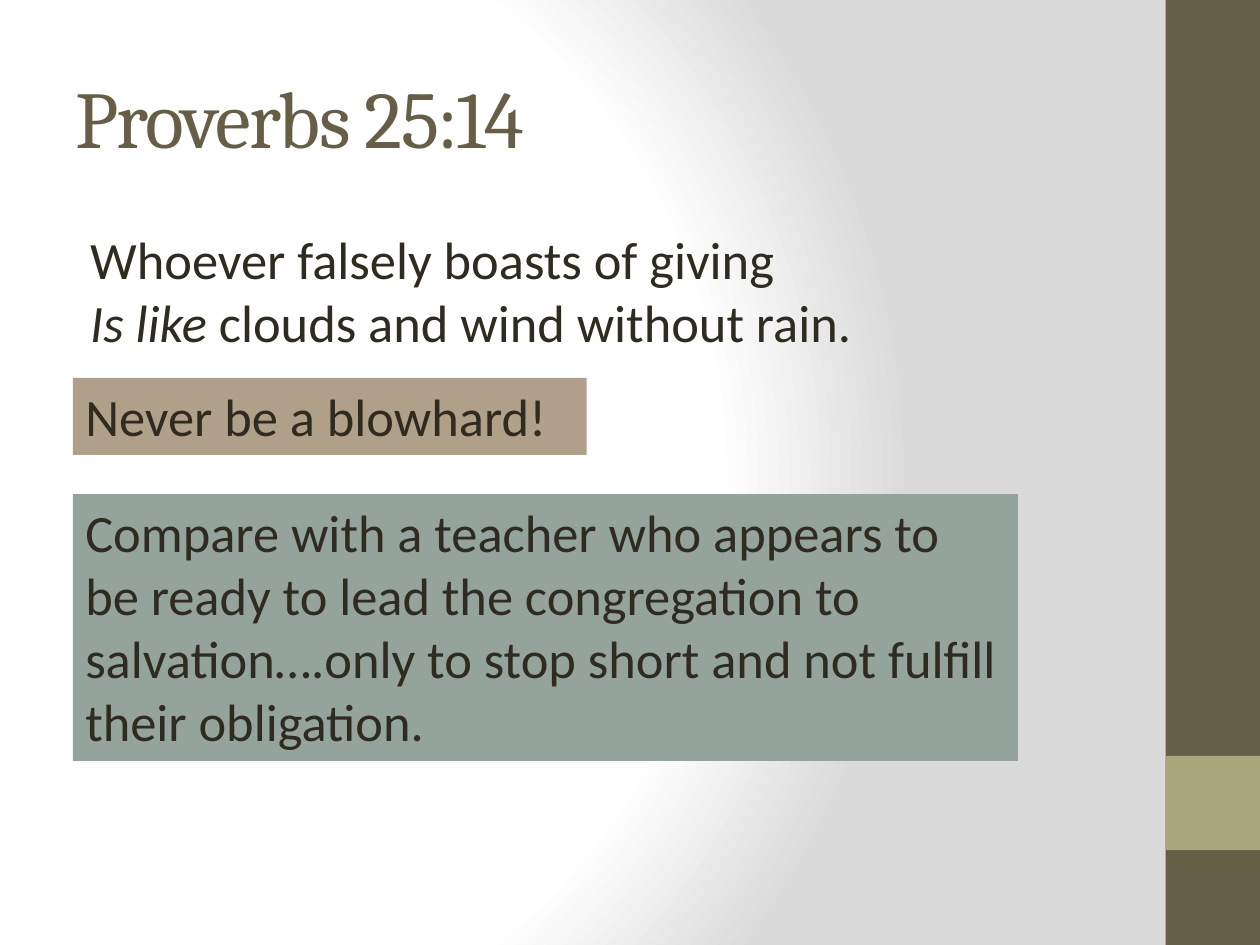
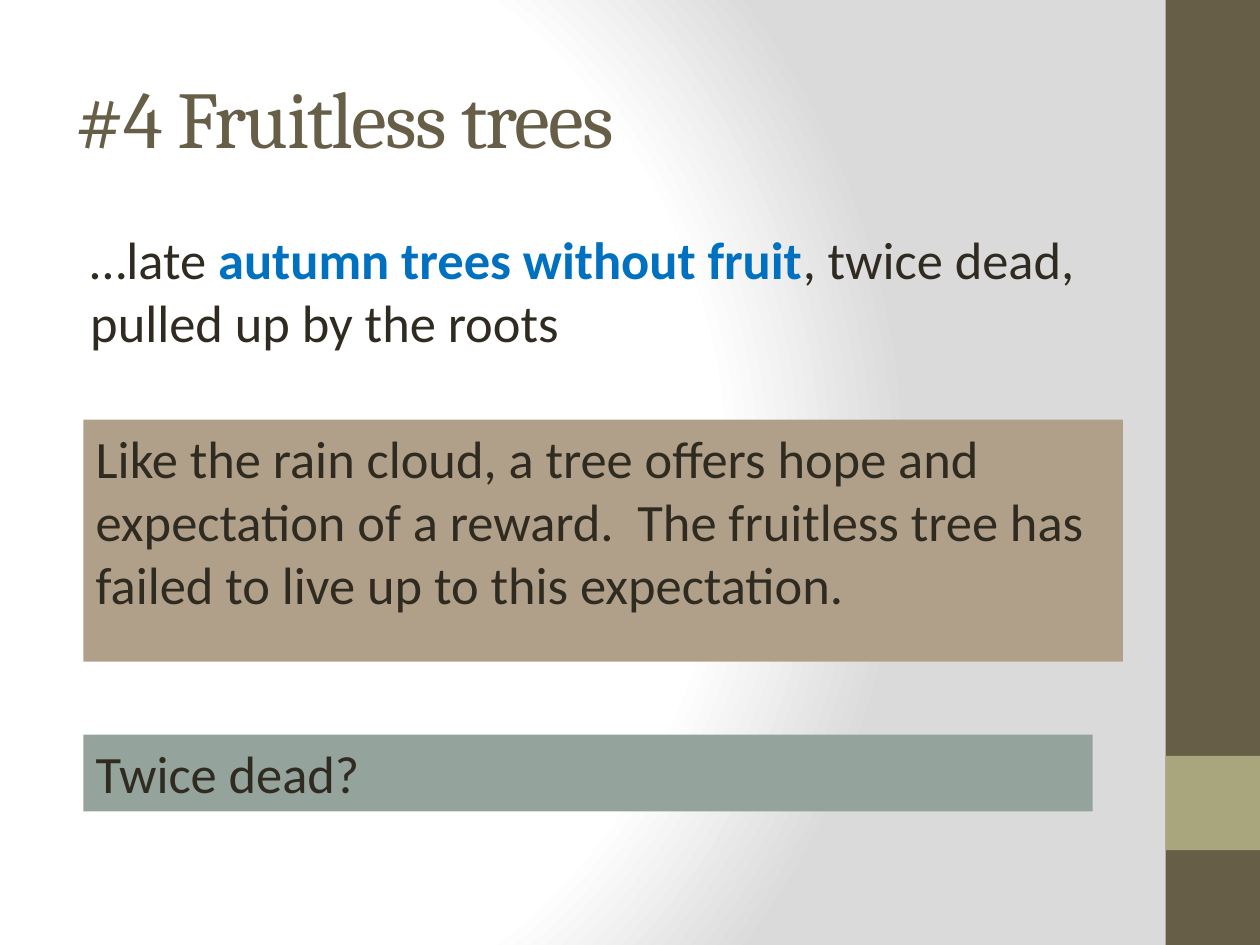
"""Build two Bible study slides with a shared title style, backdrop and side bands."""
from dataclasses import dataclass, field

from lxml.etree import fromstring
from pptx import Presentation
from pptx.dml.color import RGBColor
from pptx.enum.shapes import MSO_SHAPE
from pptx.enum.text import MSO_ANCHOR, PP_ALIGN
from pptx.oxml.ns import nsdecls
from pptx.shapes.autoshape import Shape
from pptx.slide import Slide
from pptx.util import Cm, Pt

HUES = {
    "olive": "675E47",
    "moss": "A9A57C",
    "ink": "2F2B20",
    "tan": "B1A089",
    "sage": "95A39D",
    "blue": "0070C0",
    "white": "FFFFFF",
    "grey": "DADADA",
}
HEAD = {"name": "Cambria", "size": Pt(46)}
TEXT = {"name": "Calibri", "size": Pt(30)}
FRAME = {
    "word_wrap": True,
    "margin_left": Cm(0.25),
    "margin_right": Cm(0.25),
    "margin_top": Cm(0.13),
    "margin_bottom": Cm(0.13),
    "vertical_anchor": MSO_ANCHOR.TOP,
}


@dataclass
class Box:
    left: float
    top: float
    width: float
    height: float

    def place(self) -> list[Cm]:
        return [Cm(n) for n in (self.left, self.top, self.width, self.height)]


@dataclass
class Span:
    text: str
    hue: str = "ink"
    look: dict = field(default_factory=dict)


@dataclass
class Card:
    box: Box
    fill: str
    text: str


@dataclass
class Page:
    title: str
    verse: list[list[Span]]
    cards: list[Card]


TITLE = Box(1.27, 0.76, 21.16, 3.18)
VERSE = Box(1.27, 4.45, 21.16, 3.18)
BANDS = [(Box(23.5, 0, 1.9, 19.05), "olive"), (Box(23.5, 15.24, 1.9, 1.9), "moss")]

PAGES = [
    Page(
        "Proverbs 25:14",
        [
            [Span("Whoever falsely boasts of giving")],
            [Span("Is like", look={"italic": True}), Span(" clouds and wind without rain.")],
        ],
        [
            Card(Box(1.47, 7.62, 10.36, 1.55), "tan", "Never be a blowhard!"),
            Card(
                Box(1.47, 9.96, 19.05, 5.38),
                "sage",
                "Compare with a teacher who appears to be ready to lead the congregation "
                "to salvation….only to stop short and not fulfill their obligation.",
            ),
        ],
    ),
    Page(
        "#4 Fruitless trees",
        [
            [
                Span("…late "),
                Span("autumn trees without fruit", "blue", {"bold": True}),
                Span(", twice dead, pulled up by the roots"),
            ]
        ],
        [
            Card(
                Box(1.68, 8.46, 20.96, 4.88),
                "tan",
                "Like the rain cloud, a tree offers hope and expectation of a reward.  "
                "The fruitless tree has failed to live up to this expectation.",
            ),
            Card(Box(1.68, 14.81, 20.35, 1.55), "sage", "Twice dead?"),
        ],
    ),
]


def apply(target: object, values: dict) -> None:
    for key, value in values.items():
        setattr(target, key, value)


def paint(slide: Slide) -> None:
    stops = "".join(
        f'<a:gs pos="{pos * 1000}"><a:srgbClr val="{HUES[hue]}"/></a:gs>'
        for pos, hue in ((0, "white"), (75, "white"), (100, "grey"))
    )
    blend = fromstring(
        f'<a:gradFill {nsdecls("a")} rotWithShape="1"><a:gsLst>{stops}</a:gsLst>'
        '<a:path path="circle"><a:fillToRect l="20000" t="50000" r="100000" b="50000"/>'
        "</a:path></a:gradFill>"
    )
    back = slide.background.fill
    back.solid()
    base = slide._element.cSld.bg.bgPr
    base.replace(base[0], blend)


def block(slide: Slide, box: Box, hue: str) -> Shape:
    shape = slide.shapes.add_shape(MSO_SHAPE.RECTANGLE, *box.place())
    shape.shadow.inherit = False
    shape.fill.solid()
    shape.fill.fore_color.rgb = RGBColor.from_string(HUES[hue])
    shape.line.fill.background()
    return shape


def write(shape: Shape, lines: list[list[Span]], font: dict, frame: dict, gap: int = 0) -> None:
    apply(shape.text_frame, FRAME | frame)
    para = shape.text_frame.paragraphs[0]
    para.alignment = PP_ALIGN.LEFT
    for row, spans in enumerate(lines):
        if row:
            para.add_line_break()
        for span in spans:
            run = para.add_run()
            run.text = span.text
            apply(run.font, font | span.look)
            run.font.color.rgb = RGBColor.from_string(HUES[span.hue])
            if gap:
                run.font._element.set("spc", str(gap))


def build(slide: Slide, page: Page) -> None:
    paint(slide)
    for box, hue in BANDS:
        block(slide, box, hue)
    title = slide.shapes.add_textbox(*TITLE.place())
    write(title, [[Span(page.title, "olive")]], HEAD, {"vertical_anchor": MSO_ANCHOR.MIDDLE}, -100)
    verse = slide.shapes.add_textbox(*VERSE.place())
    write(verse, page.verse, TEXT, {"margin_left": Cm(0.55)})
    for card in page.cards:
        write(block(slide, card.box, card.fill), [[Span(card.text)]], TEXT, {})


def main() -> None:
    deck = Presentation()
    apply(deck, {"slide_width": Cm(25.4), "slide_height": Cm(19.05)})
    for page in PAGES:
        build(deck.slides.add_slide(deck.slide_layouts[6]), page)
    deck.save("out.pptx")


if __name__ == "__main__":
    main()
